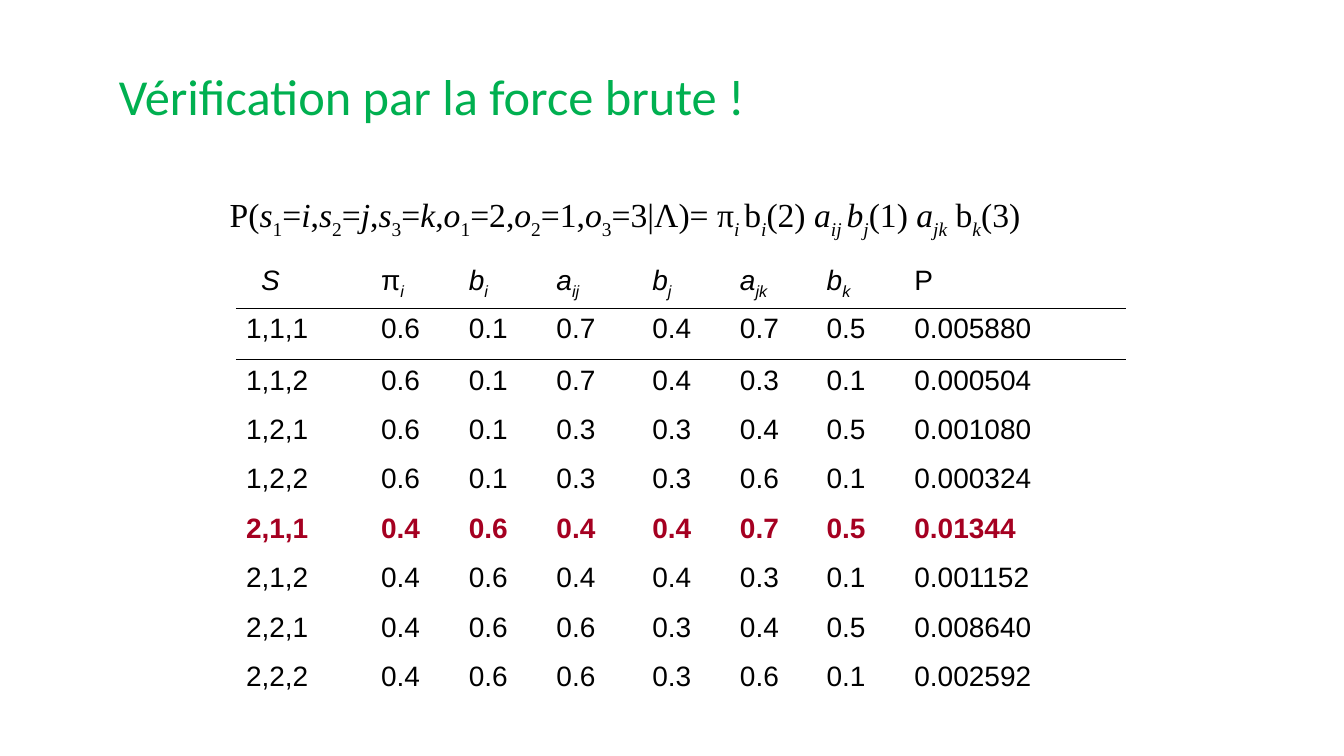
from lxml.etree import SubElement
from pptx import Presentation
from pptx.dml.color import RGBColor
from pptx.enum.text import MSO_ANCHOR as Anchor
from pptx.oxml.ns import qn
from pptx.util import Inches, Pt

BLACK, GREEN, CRIMSON = "000000", "00B050", "A50021"
NO_STYLE = "{2D5ABB26-0587-4C30-8999-92F81FD0307C}"
PLAIN, ITALIC, SUB, ITALIC_SUB = "", "i", "s", "is"

FORMULA = [
    ("P(", PLAIN), ("s", ITALIC), ("1", SUB), ("=", PLAIN), ("i", ITALIC),
    (",", PLAIN), ("s", ITALIC), ("2", SUB), ("=", PLAIN), ("j", ITALIC),
    (",", PLAIN), ("s", ITALIC), ("3", SUB), ("=", PLAIN), ("k", ITALIC),
    (",", PLAIN), ("o", ITALIC), ("1", SUB), ("=2,", PLAIN),
    ("o", ITALIC), ("2", SUB), ("=1,", PLAIN), ("o", ITALIC), ("3", SUB),
    ("=3|Λ)= π", PLAIN), ("i ", ITALIC_SUB), ("b", PLAIN), ("i", ITALIC_SUB),
    ("(2) ", PLAIN), ("a", ITALIC), ("ij ", ITALIC_SUB), ("b", ITALIC),
    ("j", ITALIC_SUB), ("(1) ", PLAIN), ("a", ITALIC), ("jk", ITALIC_SUB),
    (" b", PLAIN), ("k", ITALIC_SUB), ("(3)", PLAIN),
]
HEADINGS = [
    [("S", ITALIC)],
    [("π", PLAIN), ("i", ITALIC_SUB)],
    [("b", ITALIC), ("i", ITALIC_SUB)],
    [("a", ITALIC), ("ij", ITALIC_SUB)],
    [("b", ITALIC), ("j", ITALIC_SUB)],
    [("a", ITALIC), ("jk", ITALIC_SUB)],
    [("b", ITALIC), ("k", ITALIC_SUB)],
    [("P", PLAIN)],
]
SEQUENCES = [
    "1,1,1 0.6 0.1 0.7 0.4 0.7 0.5 0.005880",
    "1,1,2 0.6 0.1 0.7 0.4 0.3 0.1 0.000504",
    "1,2,1 0.6 0.1 0.3 0.3 0.4 0.5 0.001080",
    "1,2,2 0.6 0.1 0.3 0.3 0.6 0.1 0.000324",
    "2,1,1 0.4 0.6 0.4 0.4 0.7 0.5 0.01344",
    "2,1,2 0.4 0.6 0.4 0.4 0.3 0.1 0.001152",
    "2,2,1 0.4 0.6 0.6 0.3 0.4 0.5 0.008640",
    "2,2,2 0.4 0.6 0.6 0.3 0.6 0.1 0.002592",
]
BEST_SEQUENCE = "2,1,1"
COLUMN_WIDTHS = [1.34, 0.87, 0.87, 0.95, 0.87, 0.86, 0.87, 2.2]
ROW_HEIGHTS = [0.43, 0.51] + [0.49] * 7


def paint(target, color):
    """Give a font or a fill a colour written as a hex string."""
    target.rgb = RGBColor.from_string(color)


def add_runs(paragraph, pieces, font, size, color=BLACK, bold=False):
    """Add (text, style) pieces to a paragraph, one run each."""
    for text, style in pieces:
        run = paragraph.add_run()
        run.text = text
        run.font.name, run.font.size, run.font.bold = font, Pt(size), bold
        run.font.italic = "i" in style
        paint(run.font.color, color)
        if "s" in style:
            run._r.get_or_add_rPr().set("baseline", "-25000")


def add_line_of_text(slide, box, pieces, font, size, color=BLACK, spacing=1.0):
    """Place one vertically centred line of text in a box."""
    frame = slide.shapes.add_textbox(*map(Inches, box)).text_frame
    frame.word_wrap = True
    frame.vertical_anchor = Anchor.MIDDLE
    frame.paragraphs[0].line_spacing = spacing
    add_runs(frame.paragraphs[0], pieces, font, size, color)


def rule_cell(cell, side):
    """Draw a thin black border on one side of a cell."""
    border = SubElement(cell._tc.get_or_add_tcPr(), qn(f"a:{side}"), w=str(Pt(1)))
    fill = SubElement(border, qn("a:solidFill"))
    SubElement(fill, qn("a:srgbClr"), val=BLACK)


def add_probability_table(slide, box):
    """Place the table of state sequences and their probabilities."""
    rows = [HEADINGS] + [[[(value, PLAIN)] for value in line.split()] for line in SEQUENCES]
    table = slide.shapes.add_table(len(rows), len(HEADINGS), *map(Inches, box)).table
    table.first_row = table.horz_banding = False
    table._tbl.tblPr.find(qn("a:tableStyleId")).text = NO_STYLE
    for column, width in zip(table.columns, COLUMN_WIDTHS):
        column.width = Inches(width)
    for row, height in zip(table.rows, ROW_HEIGHTS):
        row.height = Inches(height)
    for r, pieces_by_column in enumerate(rows):
        best = pieces_by_column[0][0][0] == BEST_SEQUENCE
        for c, pieces in enumerate(pieces_by_column):
            cell = table.cell(r, c)
            if r < 2:
                rule_cell(cell, ("lnB", "lnT")[r])
            cell.fill.background()
            add_runs(cell.text_frame.paragraphs[0], pieces, "Arial", 20,
                     CRIMSON if best else BLACK, best)
    table.cell(0, 0).margin_left = Inches(0.25)


def main():
    """Build and save the slide."""
    deck = Presentation()
    deck.slide_width, deck.slide_height = Inches(13.33), Inches(7.5)
    slide = deck.slides.add_slide(deck.slide_layouts[6])
    add_line_of_text(slide, (2.18, 1.39, 10.12, 1.49), FORMULA,
                     "Times New Roman", 24, spacing=0.9)
    add_probability_table(slide, (2.34, 2.58, sum(COLUMN_WIDTHS), sum(ROW_HEIGHTS)))
    add_line_of_text(slide, (1.08, 0.59, 6.67, 0.71),
                     [("Vérification par la force brute !", PLAIN)], "Calibri", 36, GREEN)
    deck.save("out.pptx")


if __name__ == "__main__":
    main()
